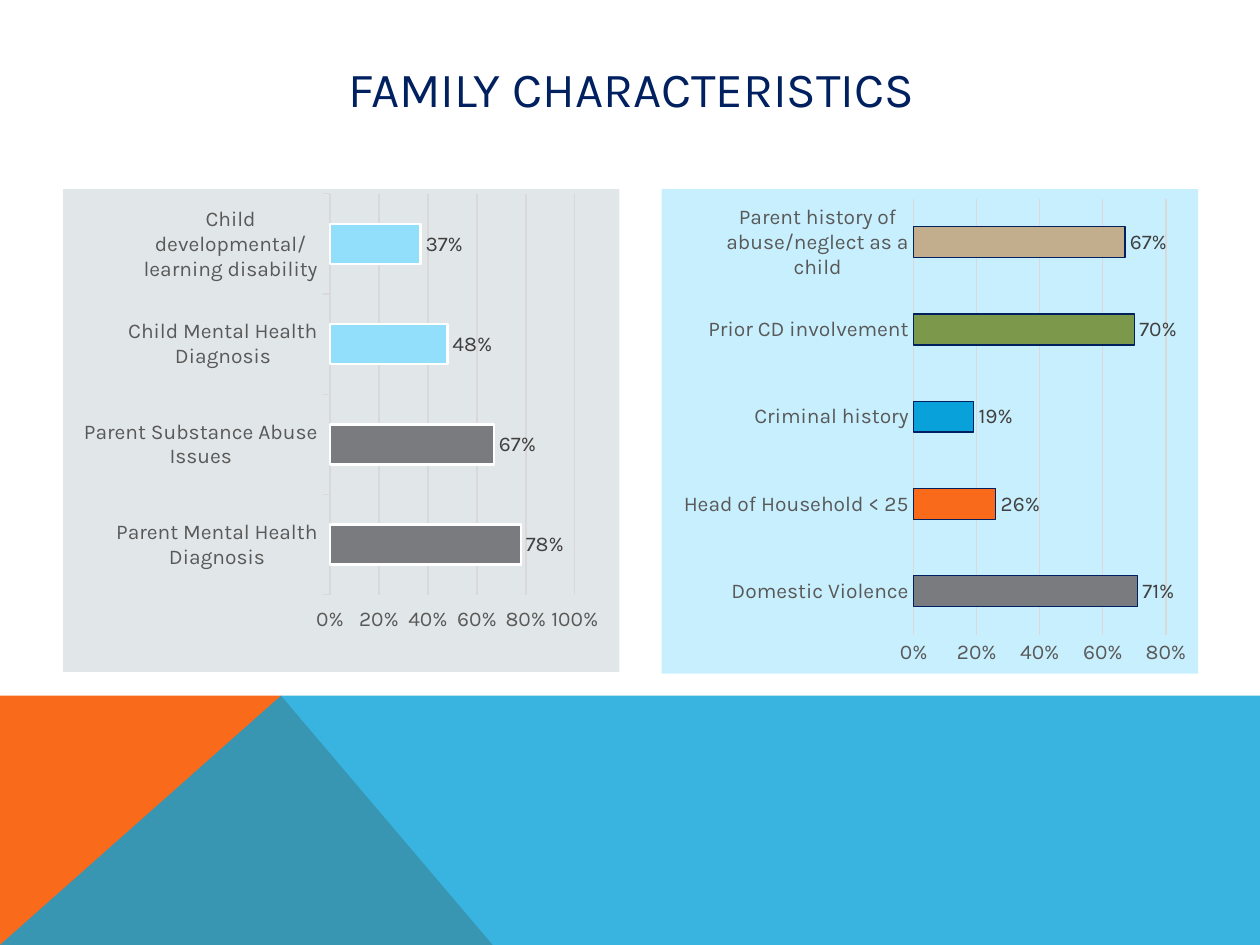
import pptx
import pptx.chart.data
import pptx.dml.color
import pptx.enum.chart
import pptx.enum.text
import pptx.oxml
import pptx.oxml.ns
import pptx.util
from lxml import etree

Pt = pptx.util.Pt
qn = pptx.oxml.ns.qn
TICK = pptx.enum.chart.XL_TICK_MARK

THEME = {
    "font": "Karla", "title_size": 28, "chart_size": 12,
    "navy": "002060", "axis_text": "595959", "value_text": "404040",
    "rule": "D9D9D9", "white": "FFFFFF", "orange": "F96A1B",
    "blue": "08A1D9", "sky": "91DFFB", "gray": "797B7E",
    "green": "7C984A", "tan": "C2AD8D",
    "gray_panel": "E1E7E8", "blue_panel": "C8EFFD",
}

TITLE = "FAMILY CHARACTERISTICS"
PAGE_WIDTH, PAGE_HEIGHT = 720, 540
BAND_TOP = 397.6

# Outline points, fill, opacity in percent
BAND = [
    ([(0, PAGE_HEIGHT), (0, BAND_TOP), (160.6, BAND_TOP), (281.5, PAGE_HEIGHT)],
     "orange", 100),
    ([(0, PAGE_HEIGHT), (160.6, BAND_TOP), (PAGE_WIDTH, BAND_TOP),
      (PAGE_WIDTH, PAGE_HEIGHT)], "blue", 80),
]

# Bars run from the bottom up: category, value, fill
CHARTS = [
    {"box": (36, 108, 318, 276), "panel": "gray_panel", "gap": 150, "maximum": 1,
     "tick": TICK.OUTSIDE, "outline": ("white", 1.5),
     "plot": (0.48, 0.01, 0.44, 0.83),
     "bars": [("Parent Mental Health Diagnosis", 0.78, "gray"),
              ("Parent Substance Abuse Issues", 0.67, "gray"),
              ("Child Mental Health Diagnosis", 0.48, "sky"),
              ("Child developmental/learning disability", 0.37, "sky")]},
    {"box": (378, 108, 306.7, 277), "panel": "blue_panel", "gap": 182, "maximum": 0.8,
     "tick": TICK.NONE, "outline": ("navy", 0.75),
     "plot": (0.47, 0.02, 0.47, 0.9),
     "bars": [("Domestic Violence", 0.71, "gray"),
              ("Head of Household < 25", 0.26, "orange"),
              ("Criminal history", 0.19, "blue"),
              ("Prior CD involvement", 0.7, "green"),
              ("Parent history of abuse/neglect as a child", 0.67, "tan")]},
]


def color(name):
    return pptx.dml.color.RGBColor.from_string(THEME[name])


def paint(fill, name):
    fill.solid()
    fill.fore_color.rgb = color(name)


def draw_line(line, name, width):
    line.color.rgb = color(name)
    line.width = Pt(width)


def set_font(font, size, name):
    font.name = THEME["font"]
    font.size = Pt(THEME[size])
    font.color.rgb = color(name)


def add_polygon(page, points, fill, opacity):
    start, *rest = [(Pt(x), Pt(y)) for x, y in points]
    builder = page.shapes.build_freeform(*start)
    builder.add_line_segments(rest, close=True)
    shape = builder.convert_to_shape()
    shape.shadow.inherit = False
    shape.line.fill.background()
    paint(shape.fill, fill)
    if opacity < 100:
        tint = shape.fill._xPr.find(".//" + qn("a:srgbClr"))
        etree.SubElement(tint, qn("a:alpha")).set("val", str(opacity * 1000))


def add_title(page):
    box = page.shapes.add_textbox(Pt(64.8), Pt(28.8), Pt(592), Pt(43.2))
    frame = box.text_frame
    frame.word_wrap = True
    frame.vertical_anchor = pptx.enum.text.MSO_ANCHOR.MIDDLE
    para = frame.paragraphs[0]
    para.text = TITLE
    para.alignment = pptx.enum.text.PP_ALIGN.CENTER
    set_font(para.font, "title_size", "navy")


def set_panel(chart, name):
    panel = pptx.oxml.parse_xml(
        f'<c:spPr {pptx.oxml.ns.nsdecls("c", "a")}><a:solidFill>'
        f'<a:srgbClr val="{THEME[name]}"/></a:solidFill>'
        '<a:ln><a:noFill/></a:ln></c:spPr>')
    chart.element.find(qn("c:chart")).addnext(panel)


def set_plot(chart, place):
    area = chart.element.find(".//" + qn("c:plotArea"))
    for old in area.findall(qn("c:layout")):
        area.remove(old)
    layout = etree.Element(qn("c:layout"))
    manual = etree.SubElement(layout, qn("c:manualLayout"))
    settings = [("layoutTarget", "inner"), ("xMode", "edge"), ("yMode", "edge"),
                *zip("xywh", place)]
    for tag, value in settings:
        etree.SubElement(manual, qn("c:" + tag)).set("val", str(value))
    area.insert(0, layout)


def add_bar_chart(page, item):
    names, values, fills = zip(*item["bars"])
    data = pptx.chart.data.CategoryChartData(number_format="0%")
    data.categories = names
    data.add_series("Series 1", values)
    chart = page.shapes.add_chart(
        pptx.enum.chart.XL_CHART_TYPE.BAR_CLUSTERED,
        *map(Pt, item["box"]), data).chart
    chart.has_legend = False
    chart.has_title = False
    set_font(chart.font, "chart_size", "axis_text")
    set_panel(chart, item["panel"])
    set_plot(chart, item["plot"])

    # Axes
    for axis in (chart.category_axis, chart.value_axis):
        axis.major_tick_mark = item["tick"]
        axis.minor_tick_mark = TICK.NONE
        set_font(axis.tick_labels.font, "chart_size", "axis_text")
    chart.category_axis.has_major_gridlines = False
    draw_line(chart.category_axis.format.line, "rule", 0.75)
    scale = chart.value_axis
    scale.minimum_scale, scale.maximum_scale = 0, item["maximum"]
    scale.major_unit = 0.2
    scale.tick_labels.number_format = "0%"
    scale.tick_labels.number_format_is_linked = False
    scale.format.line.fill.background()
    scale.has_major_gridlines = True
    draw_line(scale.major_gridlines.format.line, "rule", 0.75)

    # Bars and their values
    plot = chart.plots[0]
    plot.gap_width = item["gap"]
    plot.vary_by_categories = False
    series = plot.series[0]
    paint(series.format.fill, fills[0])
    draw_line(series.format.line, *item["outline"])
    for index, fill in enumerate(fills):
        bar = series.points[index].format
        paint(bar.fill, fill)
        draw_line(bar.line, *item["outline"])
    labels = series.data_labels
    labels.show_value = True
    labels.number_format = "0%"
    labels.number_format_is_linked = False
    labels.position = pptx.enum.chart.XL_LABEL_POSITION.OUTSIDE_END
    set_font(labels.font, "chart_size", "value_text")


def main():
    deck = pptx.Presentation()
    deck.slide_width, deck.slide_height = Pt(PAGE_WIDTH), Pt(PAGE_HEIGHT)
    page = deck.slides.add_slide(deck.slide_layouts[6])
    paint(page.background.fill, "white")
    for points, fill, opacity in BAND:
        add_polygon(page, points, fill, opacity)
    add_title(page)
    for item in CHARTS:
        add_bar_chart(page, item)
    deck.save("out.pptx")


if __name__ == "__main__":
    main()
